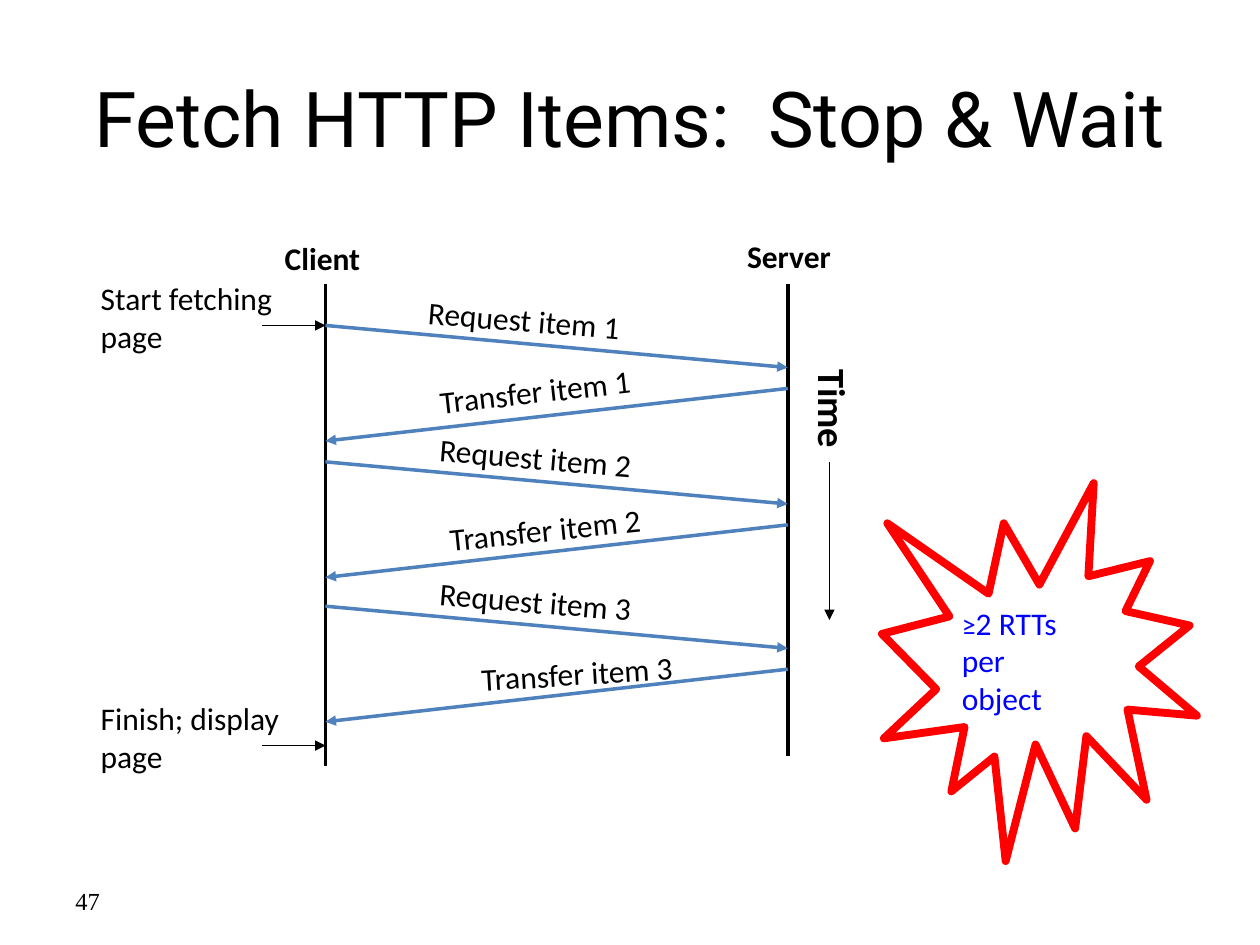
from lxml.etree import SubElement
from pptx import Presentation
from pptx.dml.color import RGBColor
from pptx.enum.shapes import MSO_CONNECTOR, MSO_SHAPE
from pptx.enum.text import MSO_ANCHOR, MSO_AUTO_SIZE, PP_ALIGN
from pptx.oxml.ns import qn
from pptx.util import Cm, Pt

THEME = {
    "ink": RGBColor(0x00, 0x00, 0x00),
    "message": RGBColor(0x4F, 0x81, 0xBD),
    "burst": RGBColor(0xFF, 0x00, 0x00),
    "note": RGBColor(0x00, 0x00, 0xFF),
    "paper": RGBColor(0xFF, 0xFF, 0xFF),
    "title_font": "Roboto",
    "body_font": "Calibri",
    "number_font": "Times New Roman",
    "title_size": 44,
    "time_size": 22,
    "body_size": 18,
    "symbol_size": 16,
    "number_size": 14,
    "thick": 2,
    "thin": 1,
    "burst_line": 4.5,
}

# All positions are in centimetres: left, top, width, height.
TITLE = ("Fetch HTTP Items:  Stop & Wait", (1.27, 0.76, 22.86, 3.18))
PAGE_NUMBER = ("47", (1.27, 17.65, 5.92, 1.02))
CLIENT_X, SERVER_X = 6.56, 15.88
LIFELINE_TOP = 5.72
LIFELINES = [
    ("Client", CLIENT_X, 15.44, (5.49, 4.7, 2.06, 1.02)),
    ("Server", SERVER_X, 15.24, (14.81, 4.65, 2.21, 1.02)),
]
# Start height of each request, then left, top and rotation of both labels.
ROUNDS = [
    (6.56, (8.38, 5.94, 4.7), (8.61, 7.37, -6.4)),
    (9.31, (8.61, 8.71, 4.7), (8.81, 10.16, -5.9)),
    (12.22, (8.61, 11.61, 4.7), (9.45, 13.06, -3.4)),
]
REQUEST_DROP, SERVER_DELAY, TRANSFER_DROP = 0.85, 1.27, 1.06
LABEL_WIDTH, LABEL_HEIGHT = 4.47, 1.02
EVENTS = [
    ("Start fetching\npage", (1.78, 5.51, 4.04, 1.78), 6.56),
    ("Finish; display\npage", (1.78, 13.97, 4.17, 1.78), 15.03),
]
EVENT_ARROW_X = 5.29
TIME = ("Time", (16.08, 7.19, 1.45, 1.88))
TIME_ARROW = ((16.72, 9.31), (16.72, 12.5))
BURST = ("≥2 RTTs\nper\nobject", (17.78, 9.74, 6.35, 7.62))


def format_text(text_frame, font="body_font", size="body_size", color="ink",
                bold=False, align=PP_ALIGN.LEFT):
    for paragraph in text_frame.paragraphs:
        paragraph.alignment = align
        for run in paragraph.runs:
            run.font.name = THEME[font]
            run.font.size = Pt(THEME[size])
            run.font.color.rgb = THEME[color]
            run.font.bold = bold


def add_text(slide, text, box, wrap=False, anchor=MSO_ANCHOR.TOP, **style):
    shape = slide.shapes.add_textbox(*map(Cm, box))
    text_frame = shape.text_frame
    text_frame.text = text
    text_frame.word_wrap = wrap
    text_frame.auto_size = MSO_AUTO_SIZE.NONE if wrap else MSO_AUTO_SIZE.SHAPE_TO_FIT_TEXT
    text_frame.vertical_anchor = anchor
    format_text(text_frame, **style)
    return shape


def add_line(slide, start, end, color="ink", width="thick", arrow=True):
    connector = slide.shapes.add_connector(
        MSO_CONNECTOR.STRAIGHT, *map(Cm, start + end))
    connector.line.color.rgb = THEME[color]
    connector.line.width = Pt(THEME[width])
    if arrow:
        SubElement(connector.line._get_or_add_ln(), qn("a:tailEnd"), type="triangle")
    SubElement(connector._element.spPr, qn("a:effectLst"))


def add_message(slide, text, start, end, label):
    """Draw an arrow between the lifelines with its tilted label."""
    left, top, rotation = label
    add_line(slide, start, end, "message")
    shape = add_text(slide, text, (left, top, LABEL_WIDTH, LABEL_HEIGHT))
    shape.rotation = rotation


def add_rounds(slide):
    for number, (sent, request_label, transfer_label) in enumerate(ROUNDS, 1):
        reply = sent + SERVER_DELAY
        add_message(slide, f"Request item {number}", (CLIENT_X, sent),
                    (SERVER_X, sent + REQUEST_DROP), request_label)
        add_message(slide, f"Transfer item {number}", (SERVER_X, reply),
                    (CLIENT_X, reply + TRANSFER_DROP), transfer_label)


def add_time_axis(slide):
    text, box = TIME
    shape = add_text(slide, text, box, anchor=MSO_ANCHOR.MIDDLE,
                     size="time_size", bold=True)
    shape.text_frame._txBody.bodyPr.set("vert", "eaVert")
    add_line(slide, *TIME_ARROW, width="thin")


def add_burst(slide):
    text, box = BURST
    shape = slide.shapes.add_shape(MSO_SHAPE.EXPLOSION1, *map(Cm, box))
    shape.shadow.inherit = False
    shape.fill.solid()
    shape.fill.fore_color.rgb = THEME["paper"]
    shape.line.color.rgb = THEME["burst"]
    shape.line.width = Pt(THEME["burst_line"])
    text_frame = shape.text_frame
    text_frame.text = text
    text_frame.word_wrap = False
    text_frame.vertical_anchor = MSO_ANCHOR.MIDDLE
    first = text_frame.paragraphs[0]
    symbol = first.runs[0]
    symbol.text, first.add_run().text = text[0], text.split("\n")[0][1:]
    format_text(text_frame, color="note")
    symbol.font.size = Pt(THEME["symbol_size"])


def main():
    presentation = Presentation()
    presentation.slide_width, presentation.slide_height = Cm(25.4), Cm(19.05)
    slide = presentation.slides.add_slide(presentation.slide_layouts[6])

    add_text(slide, *PAGE_NUMBER, wrap=True, anchor=MSO_ANCHOR.MIDDLE,
             font="number_font", size="number_size")
    add_text(slide, *TITLE, wrap=True, anchor=MSO_ANCHOR.MIDDLE,
             font="title_font", size="title_size", align=PP_ALIGN.CENTER)
    for name, x, bottom, box in LIFELINES:
        add_line(slide, (x, LIFELINE_TOP), (x, bottom), arrow=False)
        add_text(slide, name, box, bold=True)
    add_rounds(slide)
    for text, box, y in EVENTS:
        add_text(slide, text, box)
        add_line(slide, (EVENT_ARROW_X, y), (CLIENT_X, y), width="thin")
    add_time_axis(slide)
    add_burst(slide)
    presentation.save("out.pptx")


if __name__ == "__main__":
    main()
